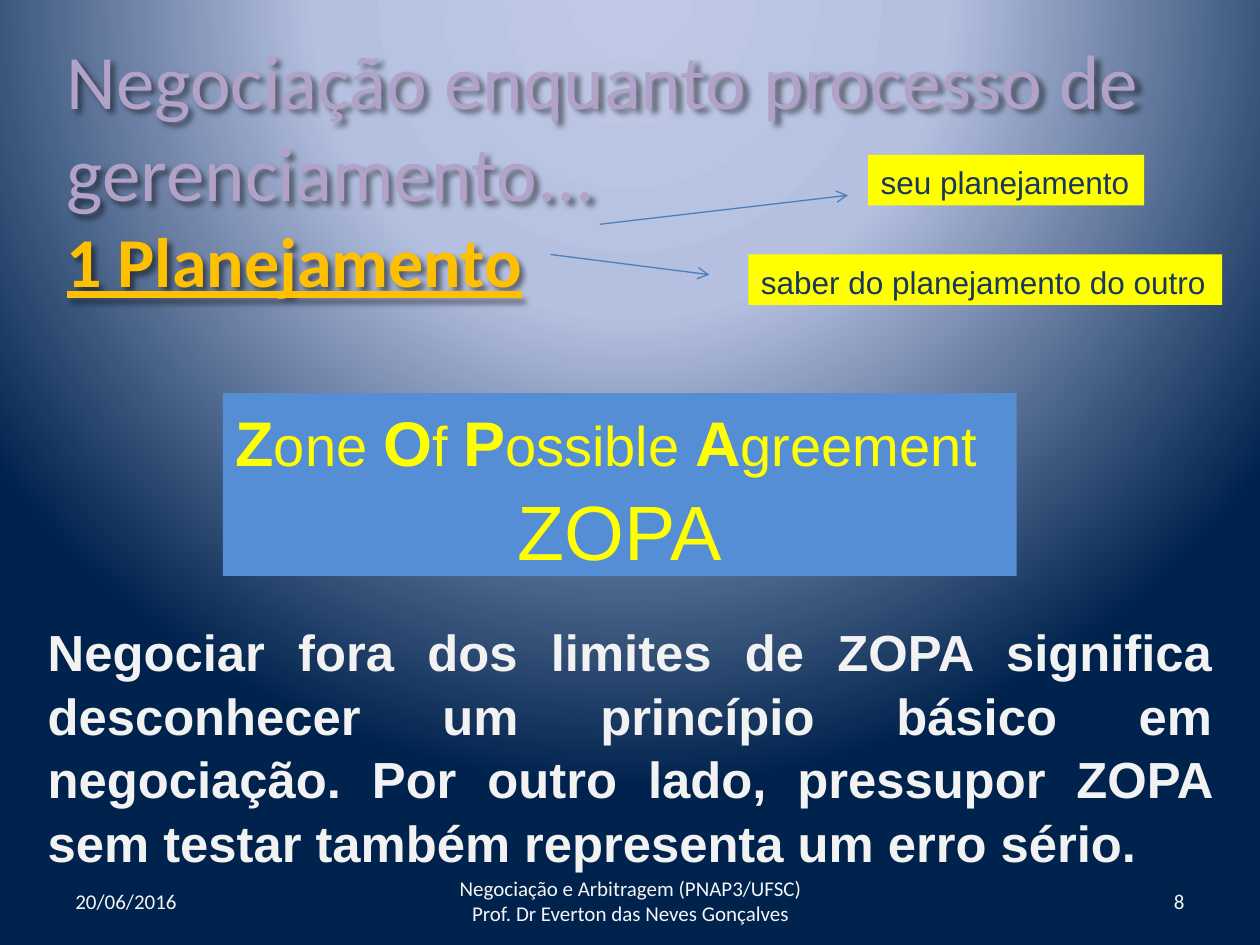
"""Build the ZOPA slide on negotiation planning."""
from dataclasses import dataclass
from itertools import cycle

from lxml.etree import SubElement
from pptx import Presentation
from pptx.dml.color import RGBColor as RGB
from pptx.enum.shapes import MSO_CONNECTOR as CONN
from pptx.enum.text import MSO_ANCHOR as ANCHOR, MSO_AUTO_SIZE as AUTO, PP_ALIGN as AL
from pptx.oxml import parse_xml
from pptx.oxml.ns import nsdecls, qn
from pptx.util import Inches, Pt

COLS, ROWS = 100, 75
WIDTH, HEIGHT = Inches(10), Inches(7.5)
COLORS = {
    "sky": "BFC9E5", "haze": "B5C0E0", "navy": "00234D", "lilac": "B3A2C7",
    "gold": "FFC000", "blue": "558ED5", "yellow": "FFFF00", "arrow": "4B7EBC",
    "ink": "17375E", "light": "F2F2F2", "footer": "F5F5F5", "shadow": "000000",
}


@dataclass(frozen=True)
class Para:
    runs: tuple[str, ...]
    size: float
    color: str
    font: str = "Arial"
    align: AL = AL.LEFT
    bold: bool = False
    underline: bool = False
    spacing: float = 1.05
    initial_size: float = 0


@dataclass(frozen=True)
class Box:
    col: float
    row: float
    cols: float
    rows: float
    paras: tuple[Para, ...]
    fill: str = ""
    grow: bool = True
    wrap: bool = True
    middle: bool = False
    shadow: bool = False


@dataclass(frozen=True)
class Arrow:
    start: tuple[float, float]
    end: tuple[float, float]


def x(cols: float) -> int:
    return round(WIDTH * cols / COLS)


def y(rows: float) -> int:
    return round(HEIGHT * rows / ROWS)


def rgb(name: str) -> RGB:
    return RGB.from_string(COLORS[name])


def paint_background(s) -> None:
    stops = "".join(
        f'<a:gs pos="{pos * 1000}"><a:srgbClr val="{COLORS[name]}"/></a:gs>'
        for pos, name in ((0, "sky"), (40, "haze"), (100, "navy")))
    s.element.cSld.insert(0, parse_xml(
        f'<p:bg {nsdecls("p", "a")}><p:bgPr><a:gradFill rotWithShape="1">'
        f'<a:gsLst>{stops}</a:gsLst><a:path path="circle">'
        '<a:fillToRect l="50000" t="-80000" r="50000" b="180000"/></a:path>'
        '</a:gradFill><a:effectLst/></p:bgPr></p:bg>'))


def add_shadow(sp) -> None:
    sp.element.spPr.append(parse_xml(
        f'<a:effectLst {nsdecls("a")}><a:outerShdw blurRad="{Pt(3)}" dist="{Pt(4)}" '
        f'dir="2700000" algn="tl"><a:srgbClr val="{COLORS["shadow"]}">'
        '<a:alpha val="50000"/></a:srgbClr></a:outerShdw></a:effectLst>'))


def write_para(p, para: Para) -> None:
    p.alignment, p.line_spacing = para.align, para.spacing
    f = p.font
    f.name, f.size, f.color.rgb = para.font, Pt(para.size), rgb(para.color)
    f.bold, f.underline = para.bold, para.underline
    for text, initial in zip(para.runs, cycle((True, False))):
        r = p.add_run()
        r.text = text
        if para.initial_size and initial:
            r.font.size, r.font.bold = Pt(para.initial_size), True


def draw_box(s, box: Box) -> None:
    sp = s.shapes.add_textbox(x(box.col), y(box.row), x(box.cols), y(box.rows))
    if box.fill:
        sp.fill.solid()
        sp.fill.fore_color.rgb = rgb(box.fill)
    if box.shadow:
        add_shadow(sp)
    tf = sp.text_frame
    tf.word_wrap = box.wrap
    tf.auto_size = AUTO.SHAPE_TO_FIT_TEXT if box.grow else AUTO.NONE
    tf.vertical_anchor = ANCHOR.MIDDLE if box.middle else ANCHOR.TOP
    for i, para in enumerate(box.paras):
        write_para(tf.add_paragraph() if i else tf.paragraphs[0], para)


def draw_arrow(s, arrow: Arrow) -> None:
    (c1, r1), (c2, r2) = arrow.start, arrow.end
    cx = s.shapes.add_connector(CONN.STRAIGHT, x(c1), y(r1), x(c2), y(r2))
    cx.line.color.rgb, cx.line.width = rgb("arrow"), Pt(0.75)
    SubElement(cx.line._get_or_add_ln(), qn("a:tailEnd"), type="arrow")
    SubElement(cx.element.spPr, qn("a:effectLst"))


def tag(col: float, row: float, cols: float, text: str) -> Box:
    return Box(col, row, cols, 4, (Para((text,), 18, "ink"),), "yellow", wrap=False)


def footer(col: float, cols: float, text: str, align: AL) -> Box:
    para = Para((text,), 12, "footer", "Calibri", align, spacing=1)
    return Box(col, 69.5, cols, 4, (para,), grow=False, middle=True)


TITLE = Box(4.3, 2.1, 92.1, 40.7, (
    Para(("Negociação enquanto processo de gerenciamento...",), 44, "lilac", "Calibri",
         spacing=1),
    Para(("1 Planejamento",), 40, "gold", "Calibri", bold=True, underline=True, spacing=1),
), grow=False, shadow=True)
ZOPA = Box(17.7, 31.2, 63, 14.5, (
    Para(("Z", "one ", "O", "f ", "P", "ossible ", "A", "greement"), 32, "yellow",
         initial_size=36),
    Para(("ZOPA",), 44, "yellow", align=AL.CENTER),
), "blue")
ARROWS = (Arrow((47.6, 17.8), (67.3, 15.5)), Arrow((43.7, 20.2), (56.3, 21.8)))
BOXES = (
    tag(68.9, 12.3, 21.9, "seu planejamento"),
    tag(59.4, 20.2, 37.6, "saber do planejamento do outro"),
    Box(2.8, 48.5, 94.5, 20.5, (Para((
        "Negociar fora dos limites de ZOPA significa desconhecer um princípio básico "
        "em negociação. Por outro lado, pressupor ZOPA sem testar também representa "
        "um erro sério.",), 29, "light", align=AL.JUSTIFY, bold=True),)),
    footer(5, 23.3, "20/06/2016", AL.LEFT),
    footer(34.2, 31.7, "Negociação e Arbitragem (PNAP3/UFSC) "
           "Prof. Dr Everton das Neves Gonçalves", AL.CENTER),
    footer(71.7, 23.3, "8", AL.RIGHT),
)


def main() -> None:
    prs = Presentation()
    prs.slide_width, prs.slide_height = WIDTH, HEIGHT
    s = prs.slides.add_slide(prs.slide_layouts[6])
    paint_background(s)
    for box in (TITLE, ZOPA):
        draw_box(s, box)
    for arrow in ARROWS:
        draw_arrow(s, arrow)
    for box in BOXES:
        draw_box(s, box)
    prs.save("out.pptx")


if __name__ == "__main__":
    main()
